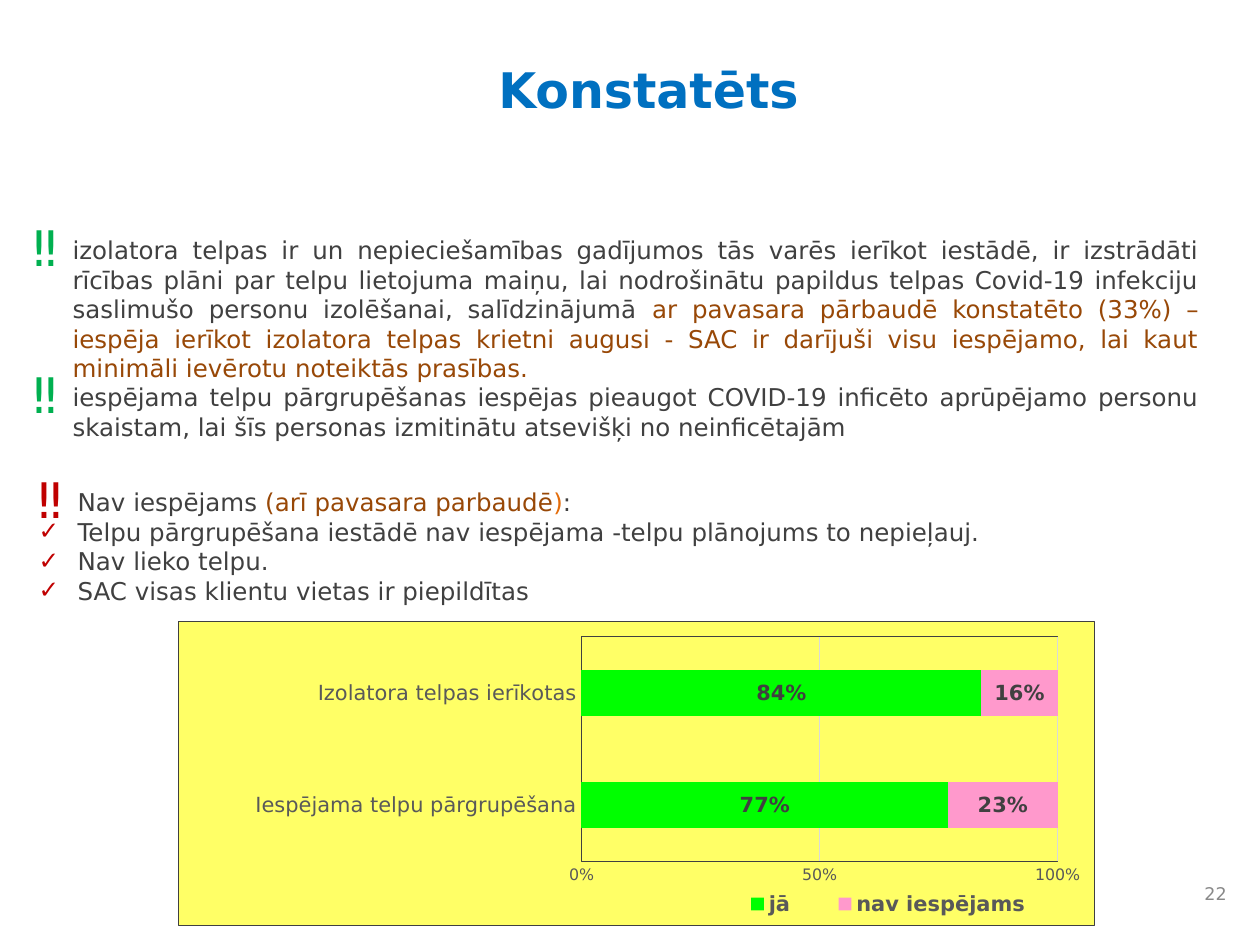
from lxml import etree
from pptx import Presentation
from pptx import util as u
from pptx.chart.data import CategoryChartData
from pptx.dml.color import RGBColor
from pptx.enum import chart as charts, text
from pptx.oxml import parse_xml
from pptx.oxml.ns import nsdecls, qn

EMU_PER_PX = 914400 / 126
FONT = "DejaVu Sans"
BLUE = RGBColor(0x00, 0x70, 0xC0)
DARK = RGBColor(0x40, 0x40, 0x40)
GREY = RGBColor(0x59, 0x59, 0x59)
PAGE_GREY = RGBColor(0x89, 0x89, 0x89)
GRID = RGBColor(0xD9, 0xD9, 0xD9)
BROWN = RGBColor(0x98, 0x48, 0x07)
ORANGE = RGBColor(0xE4, 0x6C, 0x0A)
GREEN = RGBColor(0x00, 0xB0, 0x50)
RED = RGBColor(0xC0, 0x00, 0x00)
LIME = RGBColor(0x00, 0xFF, 0x00)
PINK = RGBColor(0xFF, 0x99, 0xCC)
YELLOW = RGBColor(0xFF, 0xFF, 0x66)


def px(*lengths):
    """Turn pixel lengths into a list of EMU."""
    return [u.Emu(round(length * EMU_PER_PX)) for length in lengths]


def style(font, size, color, bold=False):
    font.name = FONT
    font.size = u.Pt(size)
    font.bold = bold
    font.color.rgb = color


presentation = Presentation()
presentation.slide_width, presentation.slide_height = px(1260, 945)
slide = presentation.slides.add_slide(presentation.slide_layouts.get_by_name("Two Content"))
title, findings, obstacles = slide.placeholders

# Title
title.left, title.top, title.width, title.height = px(448, 53, 401, 72)
title.text_frame.text = "Konstatēts"
title.text_frame.word_wrap = True
title.text_frame.auto_size = text.MSO_AUTO_SIZE.NONE
style(title.text_frame.paragraphs[0].runs[0].font, 28, BLUE, True)

# Lists: box, then paragraphs of (bullet, bullet colour, bullet size %, runs)
lists = [
    (findings, (21, 229, 1191, 221), [
        ("‼", GREEN, 200, [
            ("izolatora telpas ir un nepieciešamības gadījumos tās varēs ierīkot iestādē, "
             "ir izstrādāti rīcības plāni par telpu lietojuma maiņu, lai nodrošinātu papildus "
             "telpas Covid-19 infekciju saslimušo personu izolēšanai, salīdzinājumā ", DARK),
            ("ar pavasara pārbaudē konstatēto (33%) – iespēja ierīkot izolatora telpas krietni "
             "augusi - SAC ir darījuši visu iespējamo, lai kaut minimāli ievērotu noteiktās "
             "prasības.", BROWN)]),
        ("‼", GREEN, 200, [
            ("iespējama telpu pārgrupēšanas iespējas pieaugot COVID-19 inficēto aprūpējamo "
             "personu skaistam, lai šīs personas izmitinātu atsevišķi no neinficētajām", DARK)]),
    ]),
    (obstacles, (26, 481, 1179, 131), [
        ("‼", RED, 200, [("Nav iespējams ", DARK), ("(arī pavasara parbaudē", BROWN),
                         (")", ORANGE), (":", DARK)]),
        ("✓", RED, 100, [("Telpu pārgrupēšana iestādē nav iespējama -telpu plānojums to "
                          "nepieļauj.", DARK)]),
        ("✓", RED, 100, [("Nav lieko telpu.", DARK)]),
        ("✓", RED, 100, [("SAC visas klientu vietas ir piepildītas", DARK)]),
    ]),
]
indent = px(39)[0]
for box, place, items in lists:
    box.left, box.top, box.width, box.height = px(*place)
    frame = box.text_frame
    frame.word_wrap = True
    frame.auto_size = text.MSO_AUTO_SIZE.NONE
    frame.vertical_anchor = text.MSO_ANCHOR.TOP
    for index, (bullet, bullet_color, bullet_size, runs) in enumerate(items):
        paragraph = frame.add_paragraph() if index else frame.paragraphs[0]
        paragraph.alignment = text.PP_ALIGN.JUSTIFY
        paragraph.space_before = u.Pt(0)
        properties = paragraph._p.get_or_add_pPr()
        properties.set("marL", str(indent))
        properties.set("indent", str(-indent))
        color = etree.SubElement(properties, qn("a:buClr"))
        etree.SubElement(color, qn("a:srgbClr")).set("val", str(bullet_color))
        etree.SubElement(properties, qn("a:buSzPct")).set("val", str(bullet_size * 1000))
        etree.SubElement(properties, qn("a:buFont")).set("typeface", FONT)
        etree.SubElement(properties, qn("a:buChar")).set("char", bullet)
        for words, run_color in runs:
            run = paragraph.add_run()
            run.text = words
            style(run.font, 14, run_color)

# Chart
chart_data = CategoryChartData(number_format="0%")
chart_data.categories = ["Iespējama telpu pārgrupēšana", "Izolatora telpas ierīkotas"]
chart_data.add_series("jā", (0.77, 0.84))
chart_data.add_series("nav iespējams", (0.23, 0.16))
chart = slide.shapes.add_chart(
    charts.XL_CHART_TYPE.BAR_STACKED_100, *px(178, 621, 917, 305), chart_data).chart
chart.has_title = False
style(chart.font, 10, DARK)

plot = chart.plots[0]
plot.gap_width = 144
plot.overlap = 100
plot.vary_by_categories = False
for series, color in zip(plot.series, (LIME, PINK)):
    series.format.fill.solid()
    series.format.fill.fore_color.rgb = color
    labels = series.data_labels
    labels.show_value = True
    labels.number_format = "0%"
    labels.number_format_is_linked = False
    style(labels.font, 12, DARK, True)

category_axis, value_axis = chart.category_axis, chart.value_axis
for axis, size in ((category_axis, 12), (value_axis, 9)):
    axis.major_tick_mark = axis.minor_tick_mark = charts.XL_TICK_MARK.NONE
    style(axis.tick_labels.font, size, GREY)
category_axis.format.line.color.rgb = DARK
category_axis.format.line.width = u.Pt(0.75)
value_axis.minimum_scale, value_axis.maximum_scale = 0, 1
value_axis.major_unit = 0.5
value_axis.format.line.fill.background()
value_axis.tick_labels.number_format = "0%"
value_axis.tick_labels.number_format_is_linked = False
value_axis.major_gridlines.format.line.color.rgb = GRID
value_axis.major_gridlines.format.line.width = u.Pt(0.75)

chart.has_legend = True
chart.legend.position = charts.XL_LEGEND_POSITION.BOTTOM
chart.legend.include_in_layout = False
style(chart.legend.font, 12, GREY, True)

# Inner plot area and legend places, as shares of the chart
plot_area = chart._chartSpace.chart.plotArea
for part, index, target, place in (
        (plot_area, 0, '<c:layoutTarget val="inner"/>', (0.44, 0.05, 0.52, 0.74)),
        (chart.legend._element, 1, "", (0.58, 0.88, 0.39, 0.1))):
    for old_layout in part.findall(qn("c:layout")):
        part.remove(old_layout)
    modes = '<c:xMode val="edge"/><c:yMode val="edge"/>'
    values = "".join(f'<c:{key} val="{value}"/>' for key, value in zip("xywh", place))
    part.insert(index, parse_xml(
        f'<c:layout {nsdecls("c")}><c:manualLayout>{target}{modes}{values}'
        '</c:manualLayout></c:layout>'))

# Chart background and the frames of chart and plot area
yellow_fill = f'<a:solidFill><a:srgbClr val="{YELLOW}"/></a:solidFill>'
for add, fill in ((chart._chartSpace.chart.addnext, yellow_fill),
                  (plot_area.append, "<a:noFill/>")):
    add(parse_xml(
        f'<c:spPr {nsdecls("c", "a")}>{fill}<a:ln w="9525"><a:solidFill>'
        f'<a:srgbClr val="{DARK}"/></a:solidFill></a:ln></c:spPr>'))

# Page number
page_number = slide.shapes.add_textbox(*px(1176, 872, 63, 42)).text_frame
page_number.word_wrap = True
page_number.vertical_anchor = text.MSO_ANCHOR.MIDDLE
page_number.text = "22"
page_number.paragraphs[0].alignment = text.PP_ALIGN.RIGHT
style(page_number.paragraphs[0].runs[0].font, 10, PAGE_GREY)

presentation.save("out.pptx")
